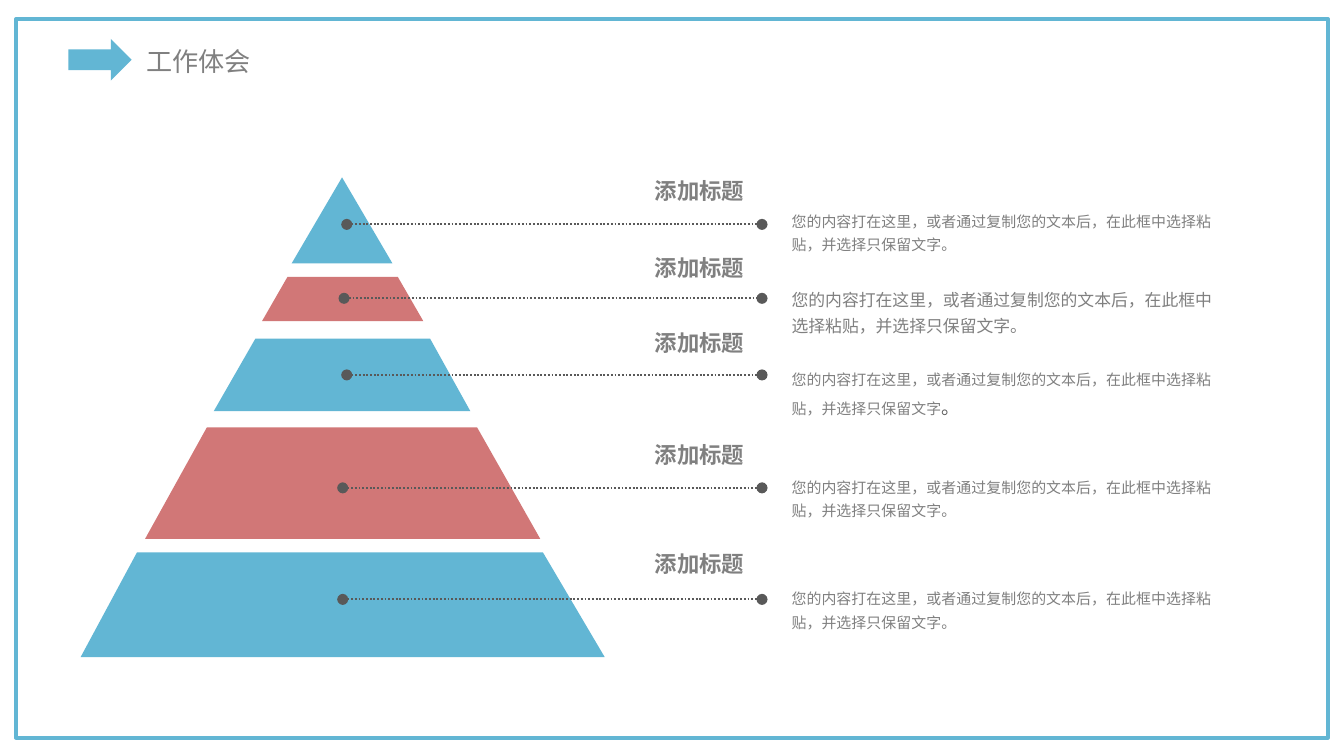
from dataclasses import dataclass

from lxml.etree import SubElement
from pptx import Presentation
from pptx.dml.color import RGBColor
from pptx.enum.dml import MSO_LINE
from pptx.enum.shapes import MSO_CONNECTOR, MSO_SHAPE
from pptx.enum.text import MSO_ANCHOR, MSO_AUTO_SIZE, PP_ALIGN
from pptx.oxml.ns import qn
from pptx.util import Inches, Pt


@dataclass(frozen=True)
class Theme:
    font: str = "Noto Sans CJK SC"
    blue: str = "62B6D4"
    red: str = "D17777"
    gray: str = "808080"
    dark: str = "595959"
    white: str = "FFFFFF"
    title_size: int = 14
    heading_size: int = 12
    stop_size: int = 10
    large_size: int = 9
    body_size: int = 8


THEME = Theme()


def write_text(para, text, *, size, color=THEME.gray, bold=False):
    span = para.add_run()
    span.text = text
    font = span.font
    font.size = Pt(size)
    font.bold = bold
    font.color.rgb = RGBColor.from_string(color)
    font.name = THEME.font
    SubElement(font._element, qn("a:ea"), typeface=THEME.font)


class PyramidSlide:
    def __init__(self, deck, theme):
        self.theme = theme
        self.page = deck.slides.add_slide(deck.slide_layouts[5])

    def paint(self, shape, fill, line=None):
        shape.shadow.inherit = False
        shape.fill.solid()
        shape.fill.fore_color.rgb = RGBColor.from_string(fill)
        if line:
            shape.line.color.rgb = RGBColor.from_string(line)
            shape.line.width = Pt(2)
        else:
            shape.line.fill.background()
        return shape

    def preset(self, kind, left, top, width, height, fill, line=None):
        shape = self.page.shapes.add_shape(
            kind, Inches(left), Inches(top), Inches(width), Inches(height)
        )
        return self.paint(shape, fill, line)

    def band(self, points, fill):
        corners = [(Inches(x), Inches(y)) for x, y in points]
        builder = self.page.shapes.build_freeform(*corners[0])
        builder.add_line_segments(corners[1:], close=True)
        return self.paint(builder.convert_to_shape(), fill)

    def frame_text(self, box, wrap, side, edge):
        frame = box.text_frame
        frame.word_wrap = wrap
        frame.auto_size = MSO_AUTO_SIZE.SHAPE_TO_FIT_TEXT
        frame.vertical_anchor = MSO_ANCHOR.TOP
        frame.margin_left = frame.margin_right = Inches(side)
        frame.margin_top = frame.margin_bottom = Inches(edge)
        return frame.paragraphs[0]

    def title(self, text, left, top, width, height):
        box = self.page.shapes.title
        box.left, box.top = Inches(left), Inches(top)
        box.width, box.height = Inches(width), Inches(height)
        para = self.frame_text(box, False, 0.11, 0.05)
        para.alignment = PP_ALIGN.LEFT
        write_text(para, text, size=self.theme.title_size)
        return box

    def text_box(self, left, top, width, height, wrap):
        box = self.page.shapes.add_textbox(
            Inches(left), Inches(top), Inches(width), Inches(height)
        )
        return self.frame_text(box, wrap, 0.08, 0.04)

    def heading(self, text, top):
        para = self.text_box(4.79, top, 0.83, 0.28, False)
        para.alignment = PP_ALIGN.CENTER
        write_text(para, text, size=self.theme.heading_size, bold=True)

    def body(self, text, top, height, size):
        para = self.text_box(5.81, top, 3.31, height, True)
        para.line_spacing = 1.3
        write_text(para, text, size=size)
        return para

    def leader(self, start, y):
        line = self.page.shapes.add_connector(
            MSO_CONNECTOR.STRAIGHT, Inches(start), Inches(y), Inches(5.67), Inches(y)
        )
        line.line.color.rgb = RGBColor.from_string(self.theme.dark)
        line.line.width = Pt(1)
        line.line.dash_style = MSO_LINE.ROUND_DOT
        outline = line.line._get_or_add_ln()
        for end in ("a:headEnd", "a:tailEnd"):
            SubElement(outline, qn(end), type="oval")
        SubElement(line._element.spPr, qn("a:effectLst"))


def main():
    deck = Presentation()
    deck.slide_width = Inches(10)
    deck.slide_height = deck.slide_width * 9 // 16
    slide = PyramidSlide(deck, THEME)

    border = slide.preset(
        MSO_SHAPE.RECTANGLE, 0.12, 0.14, 9.76, 5.35, THEME.white, THEME.blue
    )
    title = slide.title("工作体会", 0.98, 0.29, 1.03, 0.34)
    title.element.addprevious(border.element)
    slide.preset(MSO_SHAPE.RIGHT_ARROW, 0.51, 0.29, 0.47, 0.31, THEME.blue)

    slide.preset(MSO_SHAPE.ISOSCELES_TRIANGLE, 2.17, 1.32, 0.75, 0.64, THEME.blue)
    bands = [
        (2.06, 2.14, 2.96, 2.39, 1.95, 3.15, THEME.red),
        (2.52, 1.9, 3.2, 3.06, 1.59, 3.5, THEME.blue),
        (3.18, 1.54, 3.55, 4.01, 1.08, 4.02, THEME.red),
        (4.11, 1.02, 4.04, 4.89, 0.6, 4.5, THEME.blue),
    ]
    for top, top_left, top_right, base, base_left, base_right, color in bands:
        corners = [
            (top_left, top), (top_right, top), (base_right, base), (base_left, base)
        ]
        slide.band(corners, color)

    sentence = "您的内容打在这里，或者通过复制您的文本后，在此框中选择粘贴，并选择只保留文字"
    stop = "。"
    small, large = THEME.body_size, THEME.large_size
    levels = [
        (2.58, 1.67, 1.28, 1.5, 0.43, small, None),
        (2.56, 2.22, 1.85, 2.07, 0.47, large, None),
        (2.58, 2.79, 2.41, 2.68, 0.47, small, THEME.stop_size),
        (2.55, 3.63, 3.24, 3.48, 0.43, small, None),
        (2.55, 4.46, 4.05, 4.31, 0.43, small, None),
    ]
    for start, line_y, heading_top, body_top, height, size, stop_size in levels:
        slide.leader(start, line_y)
        slide.heading("添加标题", heading_top)
        if stop_size:
            para = slide.body(sentence, body_top, height, size)
            write_text(para, stop, size=stop_size, color=THEME.dark)
        else:
            slide.body(sentence + stop, body_top, height, size)

    deck.save("out.pptx")


if __name__ == "__main__":
    main()
